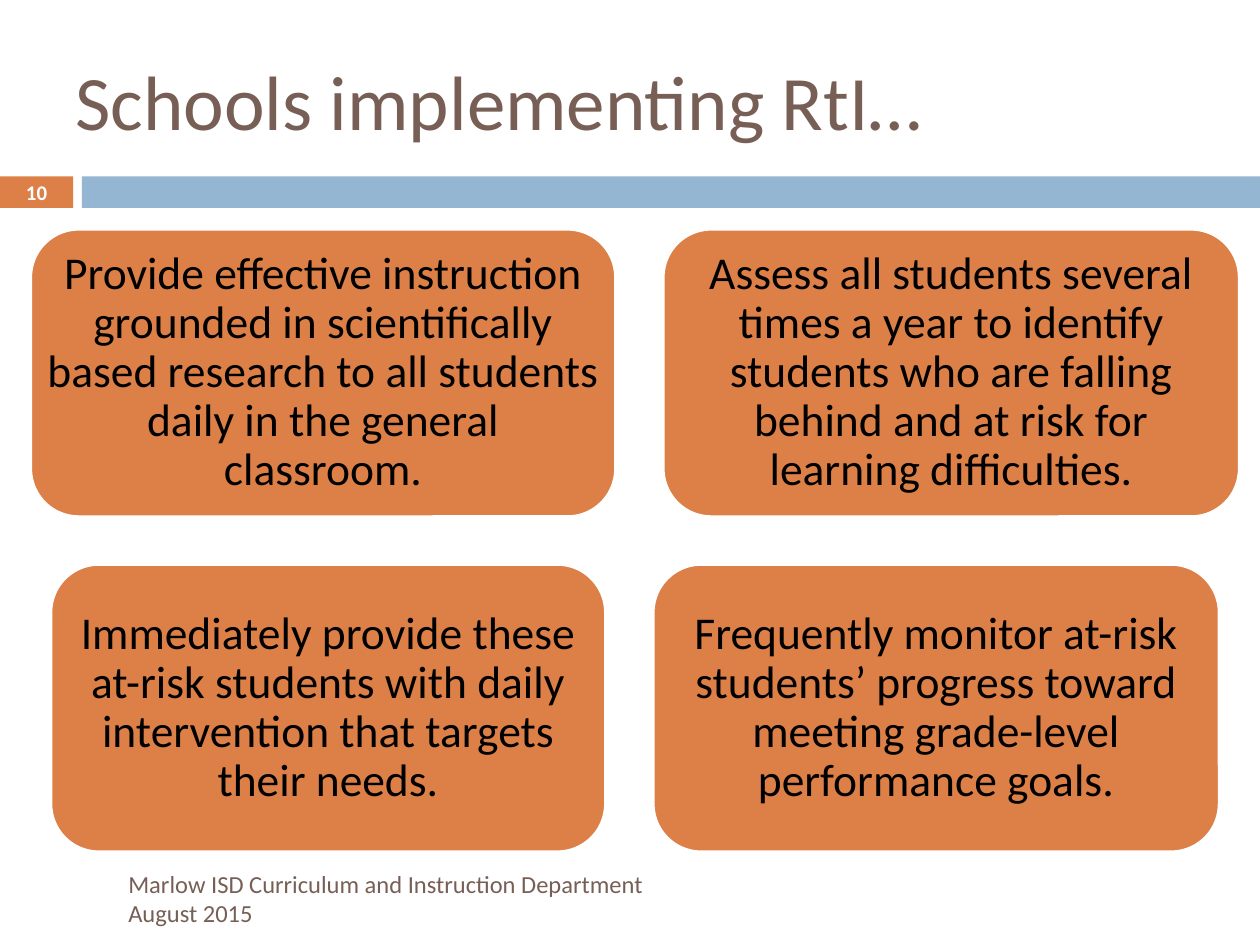
from pptx import Presentation
from pptx.dml.color import RGBColor
from pptx.enum.shapes import MSO_SHAPE as Shape
from pptx.enum.text import MSO_ANCHOR as Anchor, PP_ALIGN as Align
from pptx.util import Inches, Pt

COLORS = {"orange": "DD8047", "blue": "94B6D2", "brown": "775F55",
          "white": "FFFFFF", "black": "000000"}
FONT = "Calibri"

TITLE = "Schools implementing RtI…"
PAGE_NUMBER = "10"
FOOTER = ["Marlow ISD Curriculum and Instruction Department", "August 2015"]
# Each row holds (card width, text) pairs.
CARD_ROWS = [
    [(4.64, "Provide effective instruction grounded in scientifically based "
            "research to all students daily in the general classroom."),
     (4.57, "Assess all students several times a year to identify students "
            "who are falling behind and at risk for learning difficulties.")],
    [(4.40, "Immediately provide these at-risk students with daily "
            "intervention that targets their needs."),
     (4.49, "Frequently monitor at-risk students’ progress toward meeting "
            "grade-level performance goals.")],
]

SLIDE_WIDTH, SLIDE_HEIGHT = 10, 7.5
BAND_TOP, BAND_HEIGHT = 1.4, 0.25
NUMBER_WIDTH, BAND_LEFT = 0.58, 0.65
CARDS_TOP, CARDS_CENTER = 1.82, 5.04
CARD_HEIGHT, CARD_GAP = 2.28, 0.38


def color(name):
    return RGBColor.from_string(COLORS[name])


def write(shape, lines, size, ink, align=Align.LEFT, bold=False, spacing=1.0):
    frame = shape.text_frame
    frame.word_wrap = True
    frame.vertical_anchor = Anchor.MIDDLE
    frame.text = "\n".join(lines)
    for para in frame.paragraphs:
        para.alignment = align
        para.line_spacing = spacing
        font = para.runs[0].font
        font.name, font.size, font.bold = FONT, Pt(size), bold
        font.color.rgb = color(ink)


def add_text(page, bounds, lines, size, ink, **style):
    box = page.shapes.add_textbox(*map(Inches, bounds))
    write(box, lines, size, ink, **style)


def add_block(page, kind, bounds, fill):
    block = page.shapes.add_shape(kind, *map(Inches, bounds))
    block.shadow.inherit = False
    block.fill.solid()
    block.fill.fore_color.rgb = color(fill)
    block.line.fill.background()
    return block


def add_card(page, bounds, text):
    card = add_block(page, Shape.FLOWCHART_ALTERNATE_PROCESS, bounds, "orange")
    card.line.color.rgb = color("white")
    card.line.width = Pt(1.5)
    frame = card.text_frame
    # The rounded outline already insets its text area.
    frame.margin_left = frame.margin_right = 0
    frame.margin_top = frame.margin_bottom = 0
    write(card, [text], 26, "black", align=Align.CENTER, spacing=0.9)


def add_cards(page):
    """Stack the rows, each centred on the same vertical axis."""
    for index, row in enumerate(CARD_ROWS):
        row_width = sum(width for width, _ in row) + CARD_GAP * (len(row) - 1)
        left = CARDS_CENTER - row_width / 2
        top = CARDS_TOP + index * (CARD_HEIGHT + CARD_GAP)
        for width, text in row:
            add_card(page, (left, top, width, CARD_HEIGHT), text)
            left += width + CARD_GAP


def main():
    deck = Presentation()
    deck.slide_width, deck.slide_height = Inches(SLIDE_WIDTH), Inches(SLIDE_HEIGHT)
    page = deck.slides.add_slide(deck.slide_layouts[6])

    number_bounds = (0, BAND_TOP, NUMBER_WIDTH, BAND_HEIGHT)
    add_block(page, Shape.RECTANGLE, number_bounds, "orange")
    add_block(page, Shape.RECTANGLE,
              (BAND_LEFT, BAND_TOP, SLIDE_WIDTH - BAND_LEFT, BAND_HEIGHT), "blue")
    add_text(page, (0.5, 0.25, 9.25, 1.08), [TITLE], 44, "brown")
    add_cards(page)
    add_text(page, number_bounds, [PAGE_NUMBER], 11.9, "white",
             align=Align.CENTER, bold=True)
    add_text(page, (0.92, 6.93, 8.33, 0.4), FOOTER, 14, "brown")
    deck.save("out.pptx")


if __name__ == "__main__":
    main()
